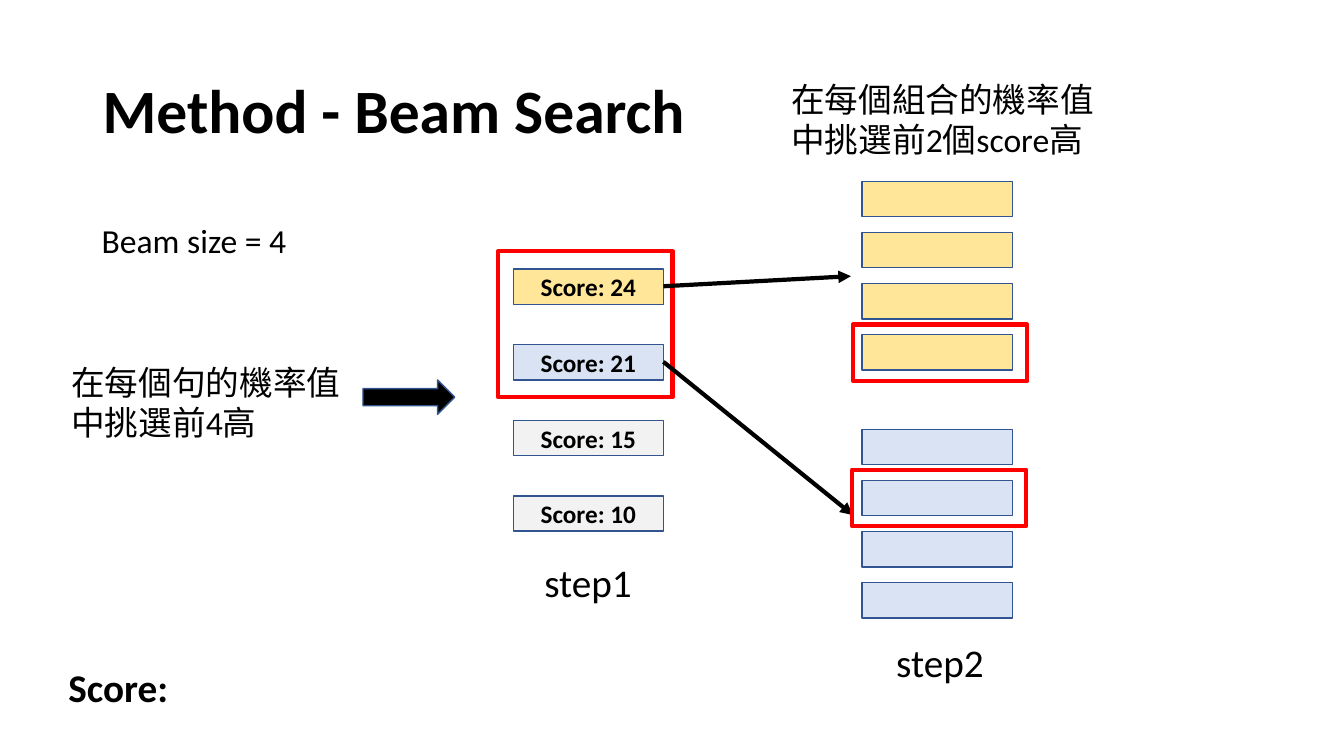
from lxml import etree
from pptx import Presentation, util as u
from pptx.dml.color import RGBColor
from pptx.enum import shapes, text
from pptx.oxml import ns

BLACK = RGBColor(0x00, 0x00, 0x00)
RED = RGBColor(0xFF, 0x00, 0x00)
NAVY = RGBColor(0x32, 0x54, 0x91)
GOLD = RGBColor(0xFF, 0xE6, 0x99)
BLUE = RGBColor(0xDA, 0xE3, 0xF3)
GRAY = RGBColor(0xF2, 0xF2, 0xF2)

CELL = u.Inches(0.1)  # one column or row of the grid
BAR_W, BAR_H = 14.9, 3.5


class Deck:
    """Holds the style and the current slide; lengths are grid cells."""

    font = "Calibri"

    def __init__(self):
        self.prs = Presentation()
        self.prs.slide_width = u.Inches(13.33)
        self.prs.slide_height = u.Inches(7.5)
        self.slide = self.prs.slides.add_slide(self.prs.slide_layouts[6])

    def grid(self, *cells):
        return [round(c * CELL) for c in cells]

    def fill_in(self, frame, words, size, bold=False):
        par = frame.paragraphs[0]
        par.text = words
        par.font.name = self.font
        par.font.size = u.Pt(size)
        par.font.bold = bold
        par.font.color.rgb = BLACK
        return par

    def label(self, words, x, y, w, h, size=24, bold=False,
              anchor=text.MSO_ANCHOR.TOP):
        frame = self.slide.shapes.add_textbox(*self.grid(x, y, w, h)).text_frame
        frame.word_wrap = True
        frame.vertical_anchor = anchor
        return self.fill_in(frame, words, size, bold)

    def shape(self, x, y, w, h, fill=None, line=NAVY, width=1,
              kind=shapes.MSO_SHAPE.RECTANGLE):
        item = self.slide.shapes.add_shape(kind, *self.grid(x, y, w, h))
        item.shadow.inherit = False
        if fill is None:
            item.fill.background()
        else:
            item.fill.solid()
            item.fill.fore_color.rgb = fill
        item.line.color.rgb = line
        item.line.width = u.Pt(width)
        return item

    def bar(self, x, y, fill, words=""):
        item = self.shape(x, y, BAR_W, BAR_H, fill)
        if words:
            frame = item.text_frame
            frame.vertical_anchor = text.MSO_ANCHOR.MIDDLE
            par = self.fill_in(frame, words, 18, True)
            par.alignment = text.PP_ALIGN.CENTER

    def frame(self, x, y, h):
        self.shape(x, y, 17.3, h, line=RED, width=3)

    def arrow(self, x1, y1, x2, y2):
        link = self.slide.shapes.add_connector(
            shapes.MSO_CONNECTOR.STRAIGHT, *self.grid(x1, y1, x2, y2))
        link.line.color.rgb = BLACK
        link.line.width = u.Pt(3)
        props = link._element.spPr
        etree.SubElement(props.find(ns.qn("a:ln")),
                         ns.qn("a:tailEnd"), type="triangle")
        etree.SubElement(props, ns.qn("a:effectLst"))


def main():
    deck = Deck()

    # Title
    title = deck.label("Method - Beam Search", 9.2, 4, 115, 14.5, 44, True,
                       text.MSO_ANCHOR.MIDDLE)
    title.line_spacing = 0.9

    # Step 1: scored sentences
    scores = [(24, GOLD), (21, BLUE), (15, GRAY), (10, GRAY)]
    for i, (score, fill) in enumerate(scores):
        deck.bar(50.9, 26.7 + 7.5 * i, fill, f"Score: {score}")
    deck.frame(49.4, 24.9, 14.5)

    # Step 2: candidates of the two best sentences
    for top, fill in [(18, GOLD), (42.6, BLUE)]:
        for i in range(4):
            deck.bar(85.5, top + 5.07 * i, fill)
    deck.arrow(65.8, 28.4, 84.4, 27.4)
    deck.arrow(65.8, 35.9, 84.6, 51.1)
    deck.frame(84.6, 32.2, 5.6)
    deck.frame(84.5, 46.6, 5.6)

    # Block arrow into step 1
    deck.shape(36, 37.7, 9.1, 3.4, BLACK, kind=shapes.MSO_SHAPE.RIGHT_ARROW)

    # Notes and captions
    deck.label("在每個句的機率值中挑選前4高", 6.1, 35.4, 31.9, 9.1)
    deck.label("在每個組合的機率值中挑選前2個score高", 77.5, 7.3, 34.2, 9.1)
    deck.label("Beam size = 4", 9.1, 21.3, 31.9, 5)
    deck.label("Score:", 5.8, 65.3, 12.2, 5.7, 28, True)
    deck.label("step1", 53, 54.9, 10.8, 5.7, 28)
    deck.label("step2", 87.9, 62.8, 10.8, 5.7, 28)

    deck.prs.save("out.pptx")


if __name__ == "__main__":
    main()
